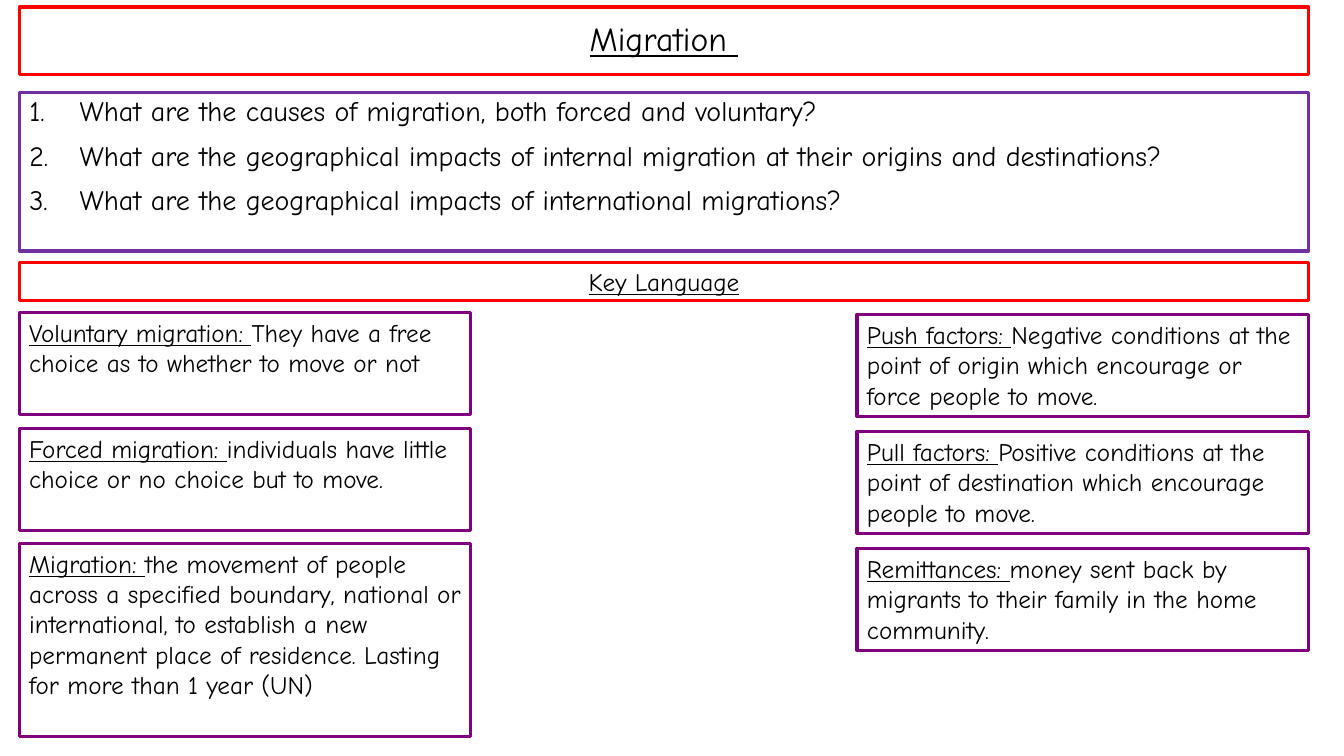
"""Build a one-page migration topic sheet with questions and key language."""
from lxml.etree import SubElement
from pptx import Presentation
from pptx.dml.color import RGBColor
from pptx.enum.shapes import MSO_SHAPE
from pptx.enum.text import MSO_ANCHOR, MSO_AUTO_SIZE, PP_ALIGN
from pptx.oxml.ns import qn
from pptx.util import Inches, Pt

LEFT, FULL_WIDTH = 0.19, 12.79
TERM_WIDTH, TERM_HEIGHT = 4.48, 1.01
RIGHT = LEFT + FULL_WIDTH - TERM_WIDTH

QUESTIONS = [
    "What are the causes of migration, both forced and voluntary?",
    "What are the geographical impacts of internal migration at their origins and destinations?",
    "What are the geographical impacts of international migrations?",
]
TERMS = [
    (LEFT, 3.1, TERM_HEIGHT, "Voluntary migration: ",
     "They have a free choice as to whether to move or not"),
    (LEFT, 4.25, TERM_HEIGHT, "Forced migration: ",
     "individuals have little choice or no choice but to move."),
    (LEFT, 5.39, 1.92, "Migration: ",
     "the movement of people across a specified boundary, national or international, "
     "to establish a new permanent place of residence. Lasting for more than 1 year (UN)"),
    (RIGHT, 3.12, TERM_HEIGHT, "Push factors: ",
     "Negative conditions at the point of origin which encourage or force people to move."),
    (RIGHT, 4.28, TERM_HEIGHT, "Pull factors: ",
     "Positive conditions at the point of destination which encourage people to move."),
    (RIGHT, 5.44, TERM_HEIGHT, "Remittances: ",
     "money sent back by migrants to their family in the home community."),
]


def style_box(box, left, top, width, height, outline, filled=False):
    """Place a box and set its outline, fill and text frame."""
    box.left, box.top = Inches(left), Inches(top)
    box.width, box.height = Inches(width), Inches(height)
    box.line.color.rgb = RGBColor.from_string(outline)
    box.line.width = Pt(2.25)
    if filled:
        box.fill.solid()
        box.fill.fore_color.rgb = RGBColor.from_string("FFFFFF")
    else:
        box.fill.background()
    box.shadow.inherit = False
    box.text_frame.word_wrap = True
    box.text_frame.auto_size = MSO_AUTO_SIZE.NONE
    box.text_frame.vertical_anchor = MSO_ANCHOR.MIDDLE if filled else MSO_ANCHOR.TOP


def style_text(para, size, align, underline_first=True):
    """Format the runs of a paragraph, underlining only the first if asked."""
    para.alignment = align
    for index, span in enumerate(para.runs):
        span.font.name = "Comic Neue"
        span.font.size = Pt(size)
        span.font.color.rgb = RGBColor.from_string("000000")
        span.font.underline = underline_first and index == 0


deck = Presentation()
deck.slide_width, deck.slide_height = Inches(13.33), Inches(7.5)
page = deck.slides.add_slide(deck.slide_layouts[1])

title = page.shapes.title
style_box(title, LEFT, 0.07, FULL_WIDTH, 0.67, "FF0000", filled=True)
title.text_frame.text = "Migration "
title.text_frame.paragraphs[0].line_spacing = 0.9
style_text(title.text_frame.paragraphs[0], 24, PP_ALIGN.CENTER)

questions = page.placeholders[1]
style_box(questions, LEFT, 0.92, FULL_WIDTH, 1.57, "7030A0")
questions.text_frame.text = "\n".join(QUESTIONS)
for para in questions.text_frame.paragraphs:
    para.line_spacing = 0.9
    para.space_before = Pt(10)
    style_text(para, 20, PP_ALIGN.LEFT, underline_first=False)
    properties = para._p.get_or_add_pPr()
    properties.set("marL", str(Inches(0.5)))
    properties.set("indent", str(Inches(-0.5)))
    SubElement(properties, qn("a:buFont"), typeface="+mj-lt")
    SubElement(properties, qn("a:buAutoNum"), type="arabicPeriod")

heading = page.shapes.add_shape(MSO_SHAPE.RECTANGLE, 0, 0, 0, 0)
style_box(heading, LEFT, 2.6, FULL_WIDTH, 0.38, "FF0000", filled=True)
heading.text_frame.text = "Key Language"
style_text(heading.text_frame.paragraphs[0], 18, PP_ALIGN.CENTER)

for left, top, height, term, meaning in TERMS:
    box = page.shapes.add_shape(MSO_SHAPE.RECTANGLE, 0, 0, 0, 0)
    style_box(box, left, top, TERM_WIDTH, height, "800080")
    para = box.text_frame.paragraphs[0]
    para.text = term
    para.add_run().text = meaning
    style_text(para, 18, PP_ALIGN.LEFT)

deck.save("out.pptx")
